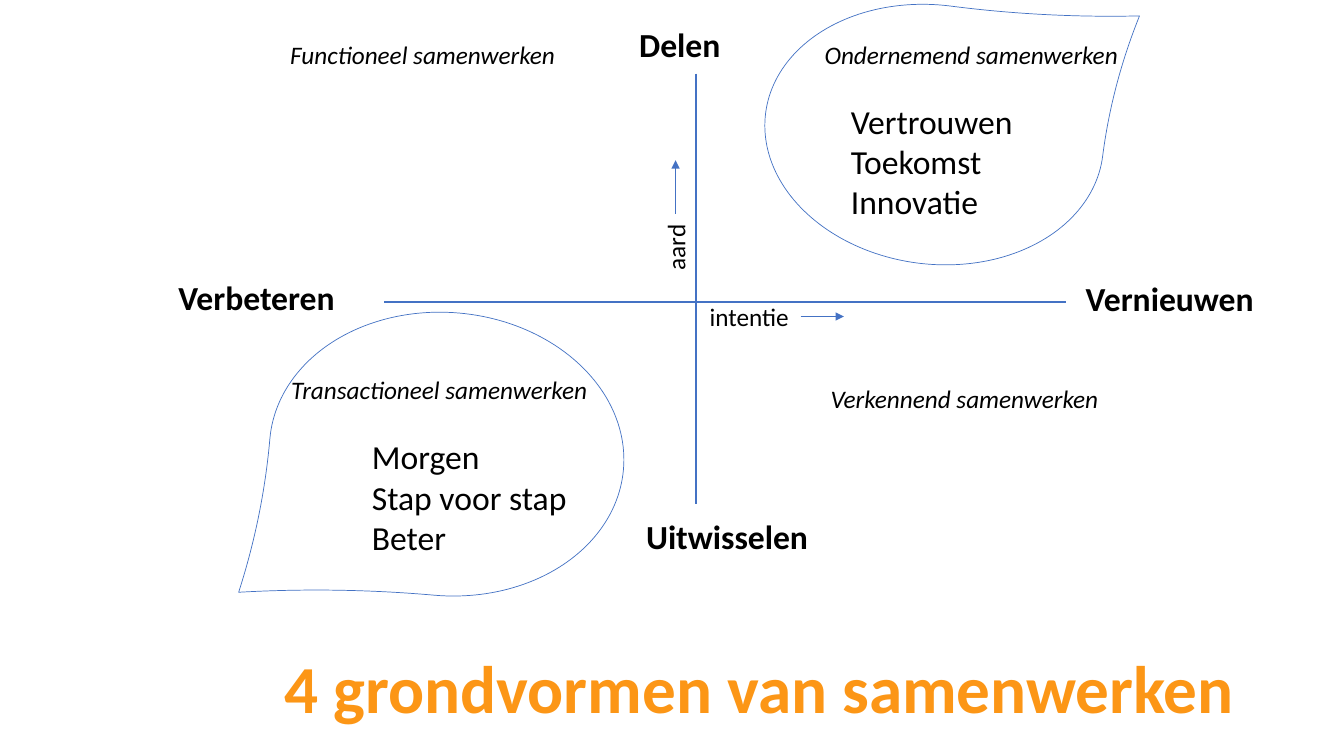
from pptx import Presentation
from pptx.dml.color import RGBColor
from pptx.enum.shapes import MSO_CONNECTOR, MSO_SHAPE
from pptx.enum.text import MSO_ANCHOR, MSO_AUTO_SIZE
from pptx.oxml.ns import qn
from pptx.util import Inches, Pt
from lxml.etree import SubElement

COLORS = {"line": "4472C4", "text": "000000", "title": "FC9616"}


class Diagram:
    font = "Calibri"

    def __init__(self, slide):
        self.s = slide

    def color(self, name):
        return RGBColor.from_string(COLORS[name])

    def text(self, lines, x, y, w, h, size=24, bold=False, italic=False,
             color="text", rotation=0):
        sp = self.s.shapes.add_textbox(Inches(x), Inches(y), Inches(w), Inches(h))
        sp.rotation = rotation
        tf = sp.text_frame
        tf.word_wrap = False
        tf.auto_size = MSO_AUTO_SIZE.SHAPE_TO_FIT_TEXT
        for i, line in enumerate(lines):
            p = tf.add_paragraph() if i else tf.paragraphs[0]
            r = p.add_run()
            r.text = line
            r.font.name = self.font
            r.font.size = Pt(size)
            r.font.bold = bold
            r.font.italic = italic
            r.font.color.rgb = self.color(color)
        return sp

    def title(self, text, x, y, w, h):
        tf = self.text([text], x, y, w, h, 48, bold=True, color="title").text_frame
        tf.word_wrap = True
        tf.auto_size = MSO_AUTO_SIZE.NONE
        tf.vertical_anchor = MSO_ANCHOR.BOTTOM
        tf.paragraphs[0].line_spacing = 0.9

    def line(self, x1, y1, x2, y2, width=1.5):
        c = self.s.shapes.add_connector(MSO_CONNECTOR.STRAIGHT, Inches(x1),
                                        Inches(y1), Inches(x2), Inches(y2))
        c.line.color.rgb = self.color("line")
        c.line.width = Pt(width)
        SubElement(c._element.spPr, qn("a:effectLst"))
        return c

    def arrow(self, label, x1, y1, x2, y2):
        c = self.line(x1, y1, x2, y2, 0.5)
        SubElement(c.line._get_or_add_ln(), qn("a:tailEnd"), type="triangle")
        c.begin_connect(label, 3)
        # Connecting ignores the label's rotation, so restore the start point
        c.begin_x, c.begin_y = Inches(x1), Inches(y1)

    def teardrop(self, x, y, w, h, rotation, point):
        sp = self.s.shapes.add_shape(MSO_SHAPE.TEAR, Inches(x), Inches(y),
                                     Inches(w), Inches(h))
        sp.shadow.inherit = False
        sp.adjustments[0] = point
        sp.rotation = rotation
        sp.fill.background()
        sp.line.color.rgb = self.color("line")
        sp.line.width = Pt(0.5)


def main():
    prs = Presentation()
    prs.slide_width, prs.slide_height = Inches(13.33), Inches(7.5)
    d = Diagram(prs.slides.add_slide(prs.slide_layouts[6]))

    # Axes and their ends
    d.line(6.9, 0.73, 6.9, 5)
    d.line(3.81, 3, 10.57, 3)
    for name, x, y, w in [("Delen", 6.24, 0.19, 1.02),
                          ("Verbeteren", 1.67, 2.7, 1.77),
                          ("Vernieuwen", 10.67, 2.71, 1.89),
                          ("Uitwisselen", 6.31, 5.07, 1.83)]:
        d.text([name], x, y, w, 0.5, bold=True)

    # Highlighted quadrants
    d.teardrop(7.58, 0.05, 3.37, 2.57, 7.3, 1.11)
    d.teardrop(2.67, 3.1, 3.52, 2.81, 185, 1.1)
    d.text(["Morgen", "Stap voor stap", "Beter"], 3.59, 4.28, 2.15, 1.31)
    d.text(["Vertrouwen", "Toekomst", "Innovatie"], 8.34, 0.95, 1.82, 1.72)

    # Axis directions
    intentie = d.text(["intentie"], 6.94, 2.94, 1, 0.4, 18)
    d.arrow(intentie, 7.94, 3.14, 8.37, 3.14)
    aard = d.text(["aard"], 6.37, 2.25, 0.66, 0.4, 18, rotation=270)
    d.arrow(aard, 6.7, 2.12, 6.7, 1.59)

    # Quadrant names
    for name, x, y, w in [("Functioneel", 2.78, 0.34, 2.86),
                          ("Transactioneel", 2.79, 3.66, 3.17),
                          ("Verkennend", 8.14, 3.75, 2.88),
                          ("Ondernemend", 8.08, 0.34, 3.14)]:
        d.text([f"{name} samenwerken"], x, y, w, 0.4, 18, italic=True)

    # Title
    d.title("4 grondvormen van samenwerken", 2.72, 6.01, 9.71, 1.26)

    prs.save("out.pptx")


if __name__ == "__main__":
    main()
